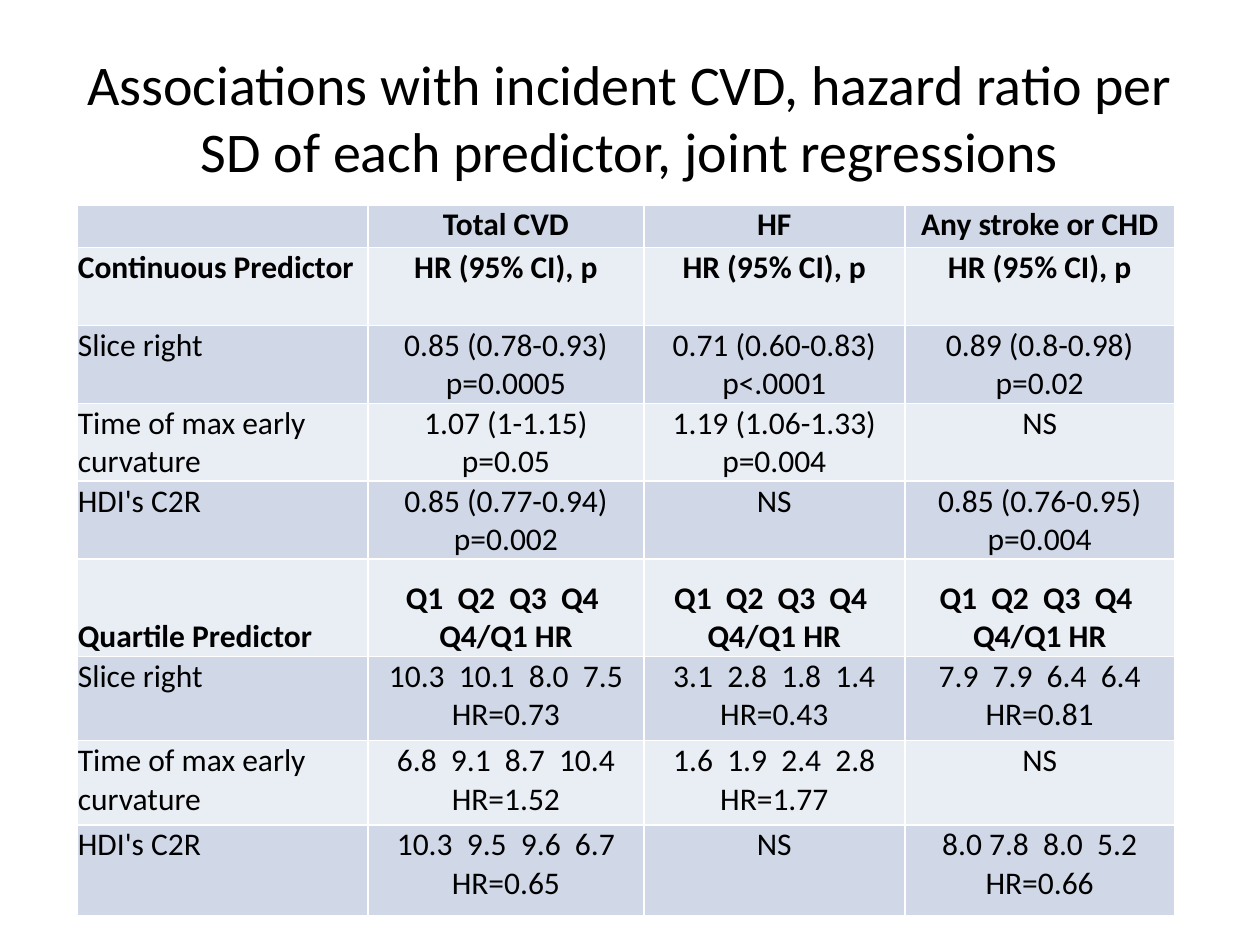
"""Build a slide with a table of hazard ratios for incident CVD."""
import pptx
import pptx.util
import pptx.dml.color
import pptx.enum.text
import pptx.oxml
import pptx.oxml.ns

Cm = pptx.util.Cm
Pt = pptx.util.Pt
RGB = pptx.dml.color.RGBColor.from_string
ALIGN = pptx.enum.text.PP_ALIGN
ANCHOR = pptx.enum.text.MSO_ANCHOR

TITLE = "Associations with incident CVD, hazard ratio per SD of each predictor, joint regressions"
RATIO = "HR (95% CI), p"
QUART = "Q1  Q2  Q3  Q4 \nQ4/Q1 HR"
ROWS = [
    ("", "Total CVD", "HF", "Any stroke or CHD"),
    ("Continuous Predictor", RATIO, RATIO, RATIO),
    ("Slice right", "0.85 (0.78-0.93)\np=0.0005", "0.71 (0.60-0.83)\np<.0001", "0.89 (0.8-0.98) p=0.02"),
    ("Time of max early curvature", "1.07 (1-1.15)\np=0.05", "1.19 (1.06-1.33) p=0.004", "NS"),
    ("HDI's C2R", "0.85 (0.77-0.94) p=0.002", "NS", "0.85 (0.76-0.95) p=0.004"),
    ("Quartile Predictor", QUART, QUART, QUART),
    ("Slice right", "10.3  10.1  8.0  7.5 HR=0.73", "3.1  2.8  1.8  1.4\nHR=0.43", "7.9  7.9  6.4  6.4\nHR=0.81"),
    ("Time of max early curvature", "6.8  9.1  8.7  10.4\nHR=1.52", "1.6  1.9  2.4  2.8\nHR=1.77", "NS"),
    ("HDI's C2R", "10.3  9.5  9.6  6.7\nHR=0.65", "NS", "8.0 7.8  8.0  5.2\nHR=0.66"),
]
HEADS = (0, 1, 5)
LOW = (2, 3, 4, 5)
WIDTHS = (5.87, 5.56, 5.26, 5.44)
HEIGHTS = (0.86, 1.57, 1.57, 1.57, 1.57, 1.96, 1.7, 1.7, 1.83)
THEME = {
    "font": "Calibri", "ink": "000000", "edge": "FFFFFF",
    "bands": ("D0D8E8", "E9EDF4"), "title": 32, "body": 18,
}
INSETS = {
    "margin_left": Cm(0.02), "margin_right": Cm(0.02),
    "margin_top": Cm(0.02), "margin_bottom": Cm(0),
}


def put(item, values):
    for name, value in values.items():
        setattr(item, name, value)


def write(frame, text, size, align, bold=False):
    frame.text = text
    style = {"name": THEME["font"], "size": Pt(size), "bold": bold}
    for para in frame.paragraphs:
        para.alignment = align
        for font in (para.font, *(run.font for run in para.runs)):
            put(font, style)
            font.color.rgb = RGB(THEME["ink"])


def edge(cell):
    props = cell._tc.get_or_add_tcPr()
    space = pptx.oxml.ns.nsdecls("a")
    for spot, side in enumerate(("lnL", "lnR", "lnT", "lnB")):
        props.insert(spot, pptx.oxml.parse_xml(
            f'<a:{side} {space} w="{Pt(1)}"><a:solidFill>'
            f'<a:srgbClr val="{THEME["edge"]}"/></a:solidFill></a:{side}>'))


def head(slide):
    box = slide.shapes.add_textbox(Cm(1.27), Cm(0.76), Cm(22.86), Cm(3.18))
    put(box.text_frame, {"word_wrap": True, "vertical_anchor": ANCHOR.MIDDLE})
    write(box.text_frame, TITLE, THEME["title"], ALIGN.CENTER)


def grid(slide):
    table = slide.shapes.add_table(
        len(ROWS), len(WIDTHS), Cm(1.55), Cm(4.13),
        Cm(sum(WIDTHS)), Cm(sum(HEIGHTS))).table
    put(table, {"first_row": False, "horz_banding": False})
    for col, width in zip(table.columns, WIDTHS):
        col.width = Cm(width)
    for r, (texts, height) in enumerate(zip(ROWS, HEIGHTS)):
        table.rows[r].height = Cm(height)
        for c, text in enumerate(texts):
            cell = table.cell(r, c)
            low = r in LOW and text != "NS" and (c > 0 or r in HEADS)
            put(cell, INSETS)
            cell.vertical_anchor = ANCHOR.BOTTOM if low else ANCHOR.TOP
            cell.fill.solid()
            cell.fill.fore_color.rgb = RGB(THEME["bands"][r % 2])
            edge(cell)
            write(cell.text_frame, text, THEME["body"],
                  ALIGN.CENTER if c else ALIGN.LEFT, r in HEADS)


def main():
    deck = pptx.Presentation()
    put(deck, {"slide_width": Cm(25.4), "slide_height": Cm(19.05)})
    slide = deck.slides.add_slide(deck.slide_layouts[6])
    head(slide)
    grid(slide)
    deck.save("out.pptx")


if __name__ == "__main__":
    main()
